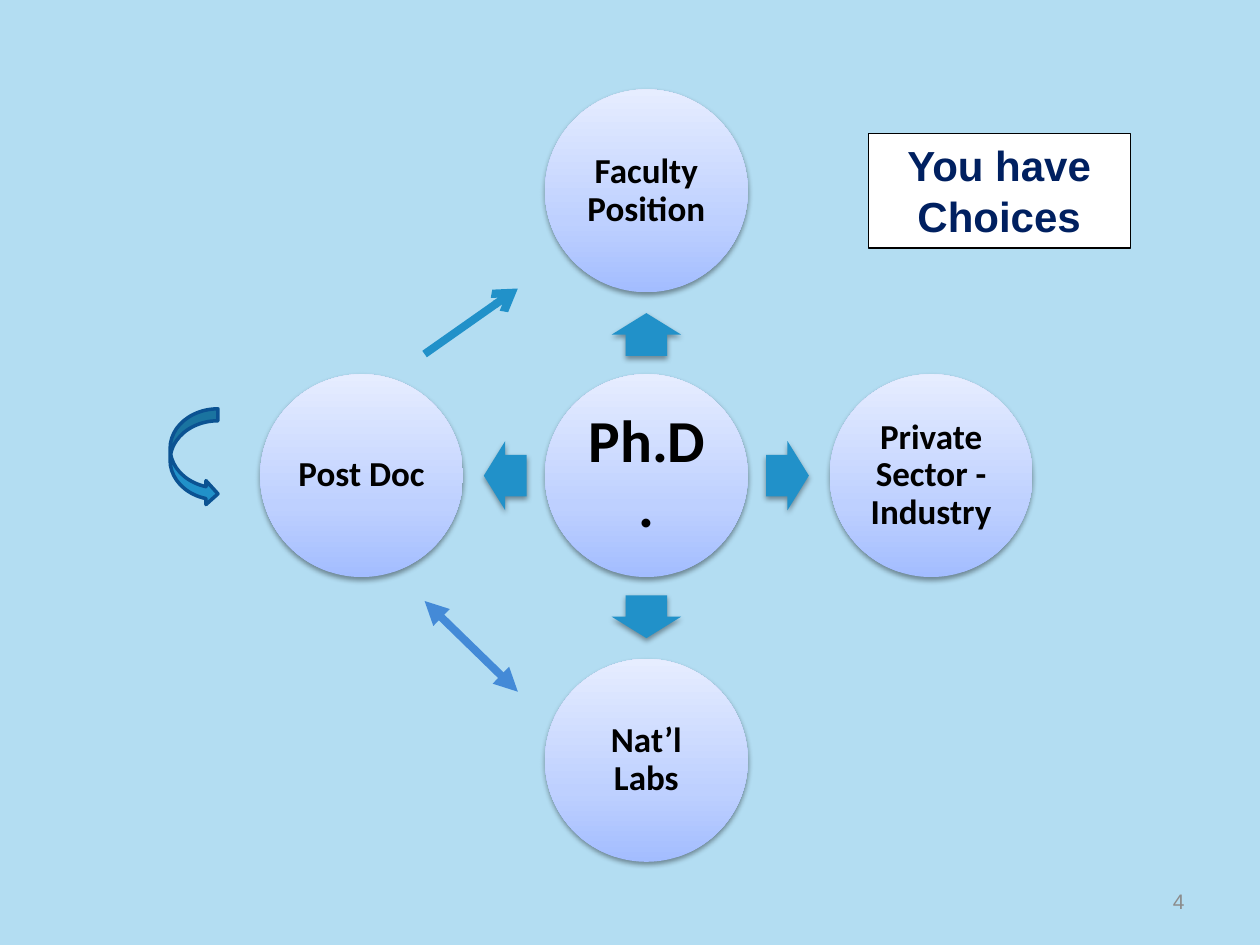
import copy
from dataclasses import dataclass

from lxml import etree
from pptx import Presentation, util as u
from pptx.dml.color import RGBColor
from pptx.enum import shapes, text
from pptx.oxml import ns


@dataclass(frozen=True)
class Theme:
    background: str = "B3DDF2"
    accent: str = "2191C9"
    accent_edge: str = "0B5292"
    exchange: str = "448AD7"
    title: str = "002060"
    muted: str = "8C8C8C"
    black: str = "000000"
    white: str = "FFFFFF"
    circle: tuple = ((0, "A3BDFF"), (0.35, "BED0FF"), (1, "E6EDFF"))
    body_font: str = "Calibri"
    title_font: str = "Arial"
    hub_size: int = 34
    choice_size: int = 20
    title_size: int = 24
    number_size: int = 12


@dataclass(frozen=True)
class Choice:
    label: str
    dx: int
    dy: int
    rotation: int


@dataclass(frozen=True)
class Link:
    start: tuple
    end: tuple
    color: str
    heads: dict


THEME = Theme()
HUB = (5.13, 3.775)
CIRCLE = 1.61
CHOICE_DISTANCE = 2.26
ARROW_DISTANCE = 1.12
ARROW_SIZE = (0.34, 0.55)

CHOICES = (
    Choice("Faculty Position", 0, -1, 270),
    Choice("Private Sector - Industry", 1, 0, 0),
    Choice("Nat’l Labs", 0, 1, 90),
    Choice("Post Doc", -1, 0, 180),
)
LINKS = (
    Link((4.11, 5.49), (3.37, 4.77), THEME.exchange,
         {"headEnd": "triangle", "tailEnd": "triangle"}),
    Link((3.37, 2.81), (4.11, 2.29), THEME.accent, {"tailEnd": "arrow"}),
)


def rgb(value: str) -> RGBColor:
    return RGBColor.from_string(value)


def add_child(parent, tag: str, **attributes):
    return etree.SubElement(parent, ns.qn(tag), attributes)


def write(shape, words: str, *, size: float, color: str, font: str,
          bold: bool = True, align=text.PP_ALIGN.CENTER,
          anchor=text.MSO_ANCHOR.MIDDLE, spacing: float = 1.0,
          margin: float | None = None) -> None:
    frame = shape.text_frame
    frame.word_wrap = True
    frame.auto_size = text.MSO_AUTO_SIZE.NONE
    frame.vertical_anchor = anchor
    if margin is not None:
        frame.margin_left = frame.margin_right = u.Inches(margin)
        frame.margin_top = frame.margin_bottom = u.Inches(margin)
    paragraph = frame.paragraphs[0]
    paragraph.alignment = align
    paragraph.line_spacing = spacing
    run = paragraph.add_run()
    run.text = words
    run.font.size = u.Pt(size)
    run.font.name = font
    run.font.bold = bold
    run.font.color.rgb = rgb(color)


def add_centred(slide, kind, center: tuple, size: tuple):
    """Add a borderless preset shape around its centre."""
    left, top = (c - s / 2 for c, s in zip(center, size))
    shape = slide.shapes.add_shape(
        kind, u.Inches(left), u.Inches(top), *map(u.Inches, size))
    shape.shadow.inherit = False
    shape.line.fill.background()
    return shape


def add_soft_shadow(shape) -> None:
    effects = shape._element.spPr.find(ns.qn("a:effectLst"))
    shadow = add_child(effects, "a:outerShdw", blurRad=str(u.Pt(3.1)),
                       dist=str(u.Pt(1.6)), dir="5400000", rotWithShape="0")
    color = add_child(shadow, "a:srgbClr", val=THEME.black)
    add_child(color, "a:alpha", val="38000")


def fill_gradient(shape, colors: tuple) -> None:
    shape.fill.gradient()
    shape.fill.gradient_angle = 90
    # The preset gradient has two stops; a third is cloned
    stop_list = shape._element.spPr.find(".//" + ns.qn("a:gsLst"))
    stop_list.append(copy.deepcopy(stop_list[0]))
    for stop, (position, color) in zip(shape.fill.gradient_stops, colors):
        stop.position = position
        stop.color.rgb = rgb(color)


def add_circle(slide, center: tuple, label: str, size: int, margin: float) -> None:
    circle = add_centred(slide, shapes.MSO_SHAPE.OVAL, center, (CIRCLE, CIRCLE))
    fill_gradient(circle, THEME.circle)
    add_soft_shadow(circle)
    write(circle, label, size=size, color=THEME.black, font=THEME.body_font,
          spacing=0.9, margin=margin)


def add_choice(slide, choice: Choice) -> None:
    def place(distance: float) -> tuple:
        return HUB[0] + choice.dx * distance, HUB[1] + choice.dy * distance

    arrow = add_centred(slide, shapes.MSO_SHAPE.RIGHT_ARROW,
                        place(ARROW_DISTANCE), ARROW_SIZE)
    arrow.rotation = choice.rotation
    arrow.adjustments[0] = 0.6
    arrow.adjustments[1] = 0.5
    arrow.fill.solid()
    arrow.fill.fore_color.rgb = rgb(THEME.accent)
    add_soft_shadow(arrow)
    add_circle(slide, place(CHOICE_DISTANCE), choice.label, THEME.choice_size, 0.03)


def add_link(slide, link: Link) -> None:
    connector = slide.shapes.add_connector(
        shapes.MSO_CONNECTOR.STRAIGHT, *map(u.Inches, link.start + link.end))
    connector.line.color.rgb = rgb(link.color)
    connector.line.width = u.Pt(4.5)
    line = connector.line._get_or_add_ln()
    for end, style in link.heads.items():
        add_child(line, f"a:{end}", type=style)
    add_child(connector._element.spPr, "a:effectLst")


def add_title(slide) -> None:
    title = slide.shapes.title
    title.left, title.top = u.Inches(6.89), u.Inches(1.06)
    title.width, title.height = u.Inches(2.08), u.Inches(0.91)
    title.fill.solid()
    title.fill.fore_color.rgb = rgb(THEME.white)
    title.line.color.rgb = rgb(THEME.black)
    title.line.width = u.Pt(0.75)
    write(title, "You have Choices", size=THEME.title_size, color=THEME.title,
          font=THEME.title_font, anchor=text.MSO_ANCHOR.TOP)


def main() -> None:
    presentation = Presentation()
    presentation.slide_width, presentation.slide_height = u.Inches(10), u.Inches(7.5)
    slide = presentation.slides.add_slide(presentation.slide_layouts.get_by_name("Title Only"))
    slide.background.fill.solid()
    slide.background.fill.fore_color.rgb = rgb(THEME.background)
    add_title(slide)

    # Hub and the choices around it
    add_circle(slide, HUB, "Ph.D.", THEME.hub_size, 0.05)
    for choice in CHOICES:
        add_choice(slide, choice)

    # Repeat loop beside the post doc
    loop = add_centred(slide, shapes.MSO_SHAPE.CURVED_RIGHT_ARROW,
                       (1.54, 3.63), (0.38, 0.77))
    loop.fill.solid()
    loop.fill.fore_color.rgb = rgb(THEME.accent)
    loop.line.color.rgb = rgb(THEME.accent_edge)
    loop.line.width = u.Pt(2)

    # Moves between choices
    for link in LINKS:
        add_link(slide, link)

    # Slide number
    number = slide.shapes.add_textbox(
        u.Inches(7.17), u.Inches(6.95), u.Inches(2.33), u.Inches(0.4))
    write(number, "4", size=THEME.number_size, color=THEME.muted,
          font=THEME.title_font, bold=False, align=text.PP_ALIGN.RIGHT)

    presentation.save("out.pptx")


if __name__ == "__main__":
    main()
